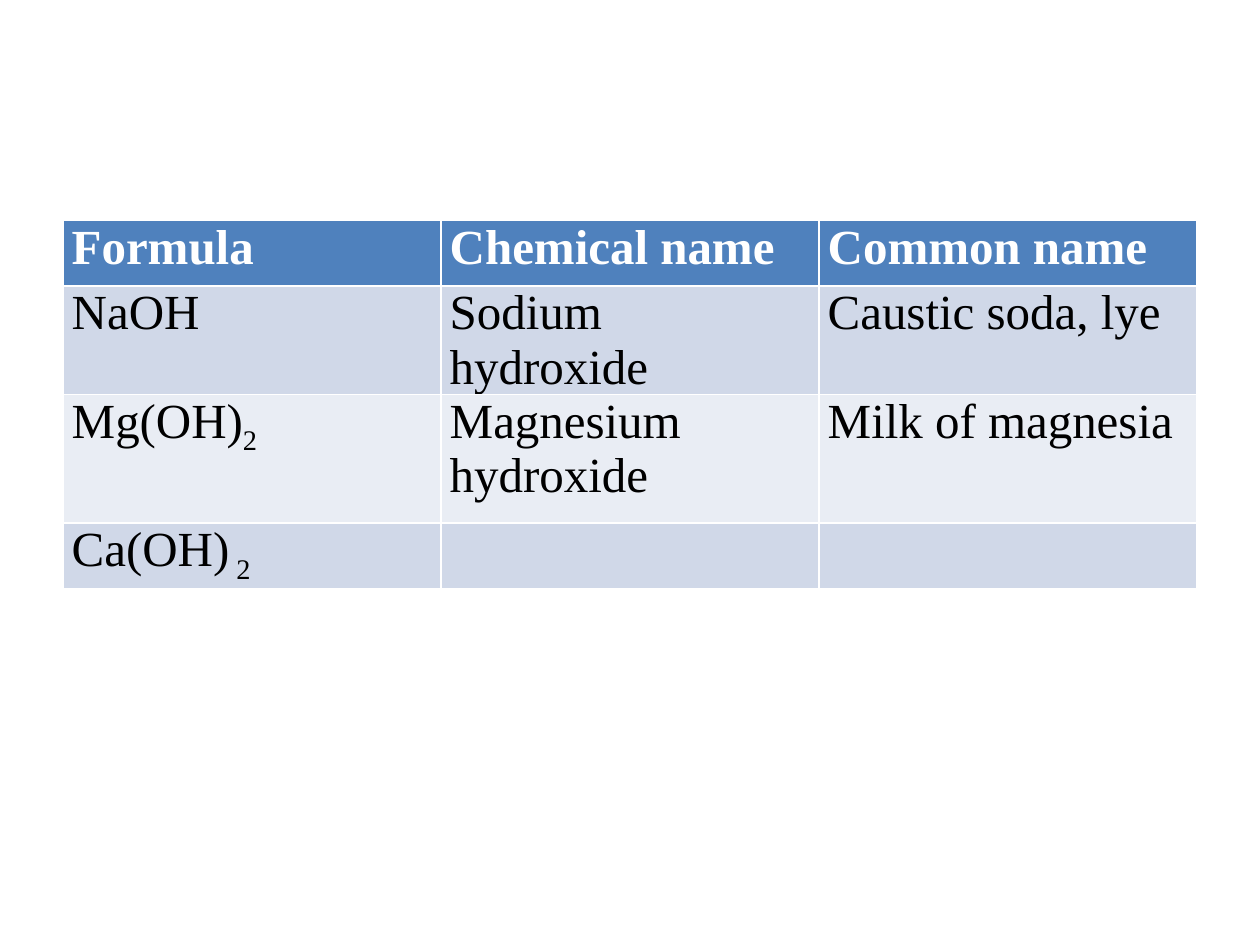
from pptx import Presentation
from pptx.dml.color import RGBColor
from pptx.util import Pt

COLORS = {
    "header": "4F81BD",
    "odd_row": "D0D8E8",
    "even_row": "E9EDF4",
    "header_text": "FFFFFF",
    "text": "000000",
}
FONT_NAME = "Times New Roman"
FONT_SIZE = 28
SUBSCRIPT = "-25000"

# A cell is a list of (text, is_subscript) runs.
ROWS = [
    [[("Formula", False)], [("Chemical name", False)], [("Common name", False)]],
    [[("NaOH", False)], [("Sodium hydroxide", False)], [("Caustic soda, lye", False)]],
    [[("Mg(OH)", False), ("2", True)], [("Magnesium hydroxide", False)],
     [("Milk of magnesia", False)]],
    [[("Ca(OH)", False), (" 2", True)], [], []],
]
ROW_HEIGHTS = [37.5, 37.5, 73.5, 37.5]
LEFT, TOP, COLUMN_WIDTH = 36, 126, 216


def color(name):
    return RGBColor.from_string(COLORS[name])


def fill_cell(cell, runs, row_index):
    is_header = row_index == 0
    band = "header" if is_header else "odd_row" if row_index % 2 else "even_row"
    cell.fill.solid()
    cell.fill.fore_color.rgb = color(band)
    cell.margin_left = cell.margin_right = Pt(5)
    cell.margin_top = cell.margin_bottom = 0
    paragraph = cell.text_frame.paragraphs[0]
    for text, is_subscript in runs:
        run = paragraph.add_run()
        run.text = text
        run.font.name = FONT_NAME
        run.font.size = Pt(FONT_SIZE)
        run.font.bold = is_header
        run.font.color.rgb = color("header_text" if is_header else "text")
        if is_subscript:
            run.font._element.set("baseline", SUBSCRIPT)


presentation = Presentation()
presentation.slide_width = Pt(720)
presentation.slide_height = Pt(540)
slide = presentation.slides.add_slide(presentation.slide_layouts[6])

# The default table style supplies the white cell borders.
column_count = len(ROWS[0])
table = slide.shapes.add_table(
    len(ROWS), column_count, Pt(LEFT), Pt(TOP),
    Pt(COLUMN_WIDTH * column_count), Pt(sum(ROW_HEIGHTS)),
).table
for column in table.columns:
    column.width = Pt(COLUMN_WIDTH)
for row_index, (cells, height) in enumerate(zip(ROWS, ROW_HEIGHTS)):
    table.rows[row_index].height = Pt(height)
    for column_index, runs in enumerate(cells):
        fill_cell(table.cell(row_index, column_index), runs, row_index)

presentation.save("out.pptx")
